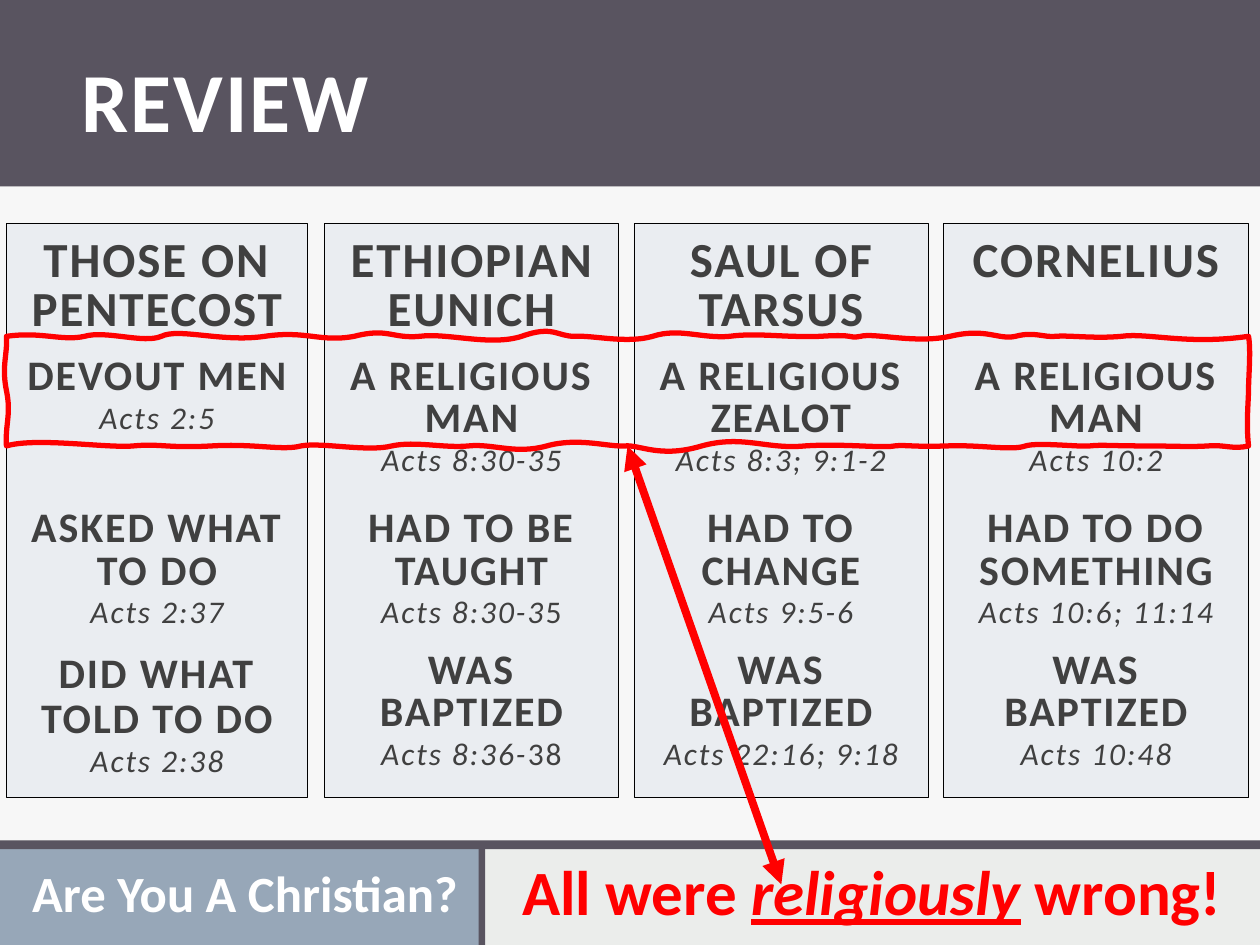
import pptx
import pptx.util
import pptx.dml.color
import pptx.enum.shapes
import pptx.enum.text
import pptx.oxml.ns
from lxml import etree

Cm = pptx.util.Cm
Pt = pptx.util.Pt
qn = pptx.oxml.ns.qn
MSO_SHAPE = pptx.enum.shapes.MSO_SHAPE
PP_ALIGN = pptx.enum.text.PP_ALIGN
MSO_ANCHOR = pptx.enum.text.MSO_ANCHOR

COLORS = {"paper": "EBEDEB", "plum": "595460", "steel": "97A7B8", "card": "EAEDF1",
          "ink": "404040", "red": "FF0000", "white": "FFFFFF", "black": "000000"}

CARDS = [
    (0.13, 6.07, ["THOSE ON PENTECOST"],
     [("DEVOUT MEN", "Acts 2:5", 12, 24),
      ("ASKED WHAT TO DO", "Acts 2:37", 42, 24),
      ("DID WHAT TOLD TO DO", "Acts 2:38", 12, 26)]),
    (6.54, 5.93, ["ETHIOPIAN", "EUNICH"],
     [("A RELIGIOUS MAN", "Acts 8:30-35", 12, 24),
      ("HAD TO BE TAUGHT", "Acts 8:30-3|5", 18, 24),
      ("WAS BAPTIZED", "Acts 8:36-|38", 12, 24)]),
    (12.78, 5.93, ["SAUL OF", "TARSUS"],
     [("A RELIGIOUS ZEALOT", "Acts 8:3; 9:1-2", 12, 24),
      ("HAD TO CHANGE", "Acts 9:5-6", 18, 24),
      ("WAS BAPTIZED", "Acts 22:16; 9:18", 12, 24)]),
    (19.02, 6.15, ["CORNELIUS"],
     [("A RELIGIOUS MAN", "Acts 10:2", 40, 24),
      ("HAD TO DO SOMETHING", "Acts 10:6; 11:14", 18, 24),
      ("WAS BAPTIZED", "Acts 10:48", 12, 24)]),
]

WAVE_WIDTH, WAVE_HEIGHT = 986, 87
TOP_WAVES = [
    (28, -4, 44, 4, 62), (79, -5, 109, 6, 123), (137, -7, 171, 5, 205),
    (238, -5, 249, 5, 276), (303, -7, 306, 2, 328), (350, -3, 384, 8, 409),
    (434, -9, 437, 0, 451), (466, -1, 492, 6, 513), (534, -7, 552, 2, 574),
    (596, -3, 616, 1, 646), (676, -2, 667, 2, 678), (689, -3, 721, 6, 749),
    (778, -7, 787, 3, 801), (816, -4, 823, 1, 833), (843, -1, 864, 2, 885),
    (906, -3, 937, 7, 986)]
BOTTOM_WAVES = [
    (973, 3, 969, -1, 954), (939, 1, 927, 0, 902), (878, 0, 869, -1, 860),
    (852, 1, 819, -3, 809), (798, 4, 774, -1, 747), (719, 1, 714, -1, 705),
    (696, 2, 664, -2, 634), (603, 3, 585, -9, 552), (519, 10, 503, -1, 491),
    (478, 1, 454, -7, 429), (404, 7, 386, -2, 367), (348, 2, 325, -4, 306),
    (287, 5, 250, -3, 234), (219, 4, 198, -2, 163), (128, 2, 122, -2, 101),
    (80, 2, 24, -7, 0)]
RIGHT_WAVES = [(988, 11, 986, 32, 986, 42), (986, 51, 984, 69, 986, 87)]
LEFT_WAVES = [(-1, 69, 4, 62, 0, 43), (-4, 23, 1, 15, 0, 0)]


def rgb(name):
    return pptx.dml.color.RGBColor.from_string(COLORS[name])


def add_rect(s, x, y, w, h, color, opacity=100):
    sp = s.shapes.add_shape(MSO_SHAPE.RECTANGLE, Cm(x), Cm(y), Cm(w), Cm(h))
    sp.shadow.inherit = False
    sp.fill.solid()
    sp.fill.fore_color.rgb = rgb(color)
    sp.line.fill.background()
    if opacity < 100:
        clr = sp.fill._xPr.find(".//" + qn("a:srgbClr"))
        etree.SubElement(clr, qn("a:alpha")).set("val", str(opacity * 1000))
    return sp


def set_insets(tf, left, top, right, bottom):
    tf.margin_left, tf.margin_top = Cm(left), Cm(top)
    tf.margin_right, tf.margin_bottom = Cm(right), Cm(bottom)


def format_run(r, size, color, bold=True, italic=False, spacing=0):
    r.font.name = "Calibri"
    r.font.size = Pt(size)
    r.font.bold = bold
    r.font.italic = italic
    r.font.color.rgb = rgb(color)
    if spacing:
        r._r.get_or_add_rPr().set("spc", str(spacing))


def add_header(s, x, y, w, h):
    add_rect(s, x, y, w, h, "plum")
    title = s.shapes.title
    title._element.getparent().append(title._element)
    title.left, title.top = Cm(x + 1.35), Cm(y + 0.25)
    title.width, title.height = Cm(w - 2.7), Cm(h - 0.51)
    tf = title.text_frame
    tf.text = "REVIEW"
    tf.word_wrap = True
    tf.vertical_anchor = MSO_ANCHOR.MIDDLE
    set_insets(tf, 0.3, 0.5, 0.3, 0.25)
    tf.paragraphs[0].alignment = PP_ALIGN.LEFT
    format_run(tf.paragraphs[0].runs[0], 48, "white", spacing=110)


def add_card(s, x, y, w, h, heads, points):
    sp = add_rect(s, x, y, w, h, "card")
    sp.line.color.rgb = rgb("black")
    sp.line.width = Pt(0.25)
    tf = sp.text_frame
    tf.word_wrap = True
    tf.vertical_anchor = MSO_ANCHOR.TOP
    set_insets(tf, 0.3, 0.3, 0.3, 0.25)
    lines = [(head, 28, 28, 0, False) for head in heads]
    for point, ref, before, leading in points:
        lines += [(point, 24, leading, before, False), (ref, 18, 21, 0, True)]
    for i, (text, size, leading, before, is_ref) in enumerate(lines):
        p = tf.add_paragraph() if i else tf.paragraphs[0]
        p.alignment = PP_ALIGN.CENTER
        p.line_spacing = Pt(leading)
        p.space_before = Pt(before)
        slanted, _, upright = text.partition("|")
        for part, italic in ((slanted, is_ref), (upright, False)):
            if part:
                r = p.add_run()
                r.text = part
                format_run(r, size, "ink", not is_ref, italic, 110)


def bend_segments(sp, curves):
    segments = list(sp._element.iter(qn("a:lnTo")))
    for segment, curve in zip(segments, curves):
        bezier = etree.Element(qn("a:cubicBezTo"))
        for px, py in zip(curve[::2], curve[1::2]):
            pt = etree.SubElement(bezier, qn("a:pt"))
            pt.set("x", str(px))
            pt.set("y", str(py))
        segment.getparent().replace(segment, bezier)


def add_wavy_frame(s, x, y, w):
    def edge(waves, base):
        return [(x1, base + y1, x2, base + y2, x3, base) for x1, y1, x2, y2, x3 in waves]

    curves = edge(TOP_WAVES, 0) + RIGHT_WAVES + edge(BOTTOM_WAVES, WAVE_HEIGHT) + LEFT_WAVES
    builder = s.shapes.build_freeform(0, 0, scale=Cm(w) / WAVE_WIDTH)
    builder.add_line_segments([curve[4:] for curve in curves], close=True)
    sp = builder.convert_to_shape(Cm(x), Cm(y))
    bend_segments(sp, curves)
    sp.shadow.inherit = False
    sp.fill.background()
    sp.line.color.rgb = rgb("red")
    sp.line.width = Pt(3)


def add_caption(s, x, y, w, h, parts, size, color):
    tf = s.shapes.add_textbox(Cm(x), Cm(y), Cm(w), Cm(h)).text_frame
    tf.word_wrap = True
    p = tf.paragraphs[0]
    p.alignment = PP_ALIGN.CENTER
    for text, stressed in parts:
        r = p.add_run()
        r.text = text
        format_run(r, size, color, italic=stressed)
        r.font.underline = stressed


def add_footer(s, x, y, w, h):
    add_rect(s, x, y + 0.02, 9.68, h - 0.02, "steel")
    add_rect(s, x, y, w, 0.18, "plum")
    add_rect(s, x + 9.65, y + 0.05, 0.13, h - 0.05, "plum")
    add_caption(s, x + 9.75, y + 0.13, w - 9.75, 1.8,
                [("All were ", False), ("religiously", True), (" wrong!", False)], 36, "red")
    add_caption(s, x + 0.13, y + 0.31, 9.63, 1.5, [("Are You A Christian?", False)], 29, "white")


def add_arrow(s, x1, y1, x2, y2):
    line = s.shapes.add_connector(pptx.enum.shapes.MSO_CONNECTOR.STRAIGHT,
                                  Cm(x1), Cm(y1), Cm(x2), Cm(y2))
    line.line.color.rgb = rgb("red")
    line.line.width = Pt(4.5)
    ln = line.line._get_or_add_ln()
    for tag in ("a:headEnd", "a:tailEnd"):
        etree.SubElement(ln, qn(tag)).set("type", "triangle")
    etree.SubElement(line._element.spPr, qn("a:effectLst"))


def main():
    prs = pptx.Presentation()
    prs.slide_width, prs.slide_height = Cm(25.4), Cm(19.05)
    s = prs.slides.add_slide(prs.slide_layouts[5])
    s.background.fill.solid()
    s.background.fill.fore_color.rgb = rgb("paper")
    add_rect(s, 0, 3.76, 25.4, 13.18, "white", opacity=60)
    add_header(s, 0, 0, 25.4, 3.76)
    for x, w, heads, points in CARDS:
        add_card(s, x, 4.5, w, 11.58, heads, points)
    add_wavy_frame(s, 0.13, 6.78, 25.04)
    add_footer(s, 0, 16.94, 25.4, 2.11)
    add_arrow(s, 12.65, 8.99, 15.75, 17.83)
    prs.save("out.pptx")


if __name__ == "__main__":
    main()
